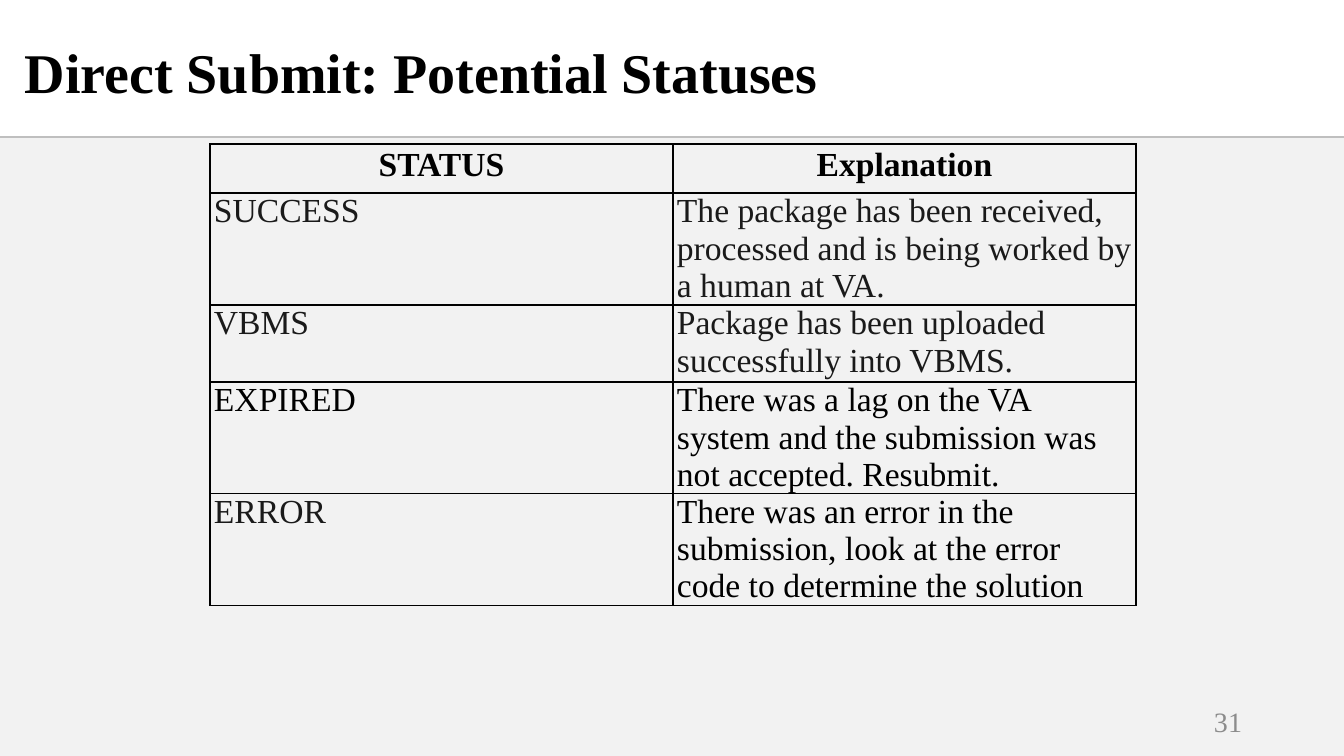
"""Build the slide listing the potential statuses of a direct submission."""
from lxml import etree
from pptx import Presentation
from pptx import util as u
from pptx.dml.color import RGBColor
from pptx.enum import shapes, text
from pptx.oxml import ns

PX = 914400 / 100.8
BLACK = "000000"
DARK = "1A1A1A"


def px(*lengths):
    return [u.Emu(round(length * PX)) for length in lengths]


def write(frame, words, size=24, color=BLACK, bold=False,
          align=text.PP_ALIGN.LEFT, anchor=text.MSO_ANCHOR.TOP, spacing=1.0):
    frame.word_wrap = True
    frame.vertical_anchor = anchor
    paragraph = frame.paragraphs[0]
    paragraph.alignment = align
    paragraph.line_spacing = spacing
    run = paragraph.add_run()
    run.text = words
    run.font.name = "Times New Roman"
    run.font.size = u.Pt(size)
    run.font.bold = bold
    run.font.color.rgb = RGBColor.from_string(color)


deck = Presentation()
deck.slide_width, deck.slide_height = px(1344, 756)
slide = deck.slides.add_slide(deck.slide_layouts[6])

body = slide.shapes.add_shape(shapes.MSO_SHAPE.RECTANGLE, *px(0, 138, 1344, 618))
body.shadow.inherit = False
body.fill.solid()
body.fill.fore_color.rgb = RGBColor.from_string("F2F2F2")
body.line.fill.background()

divider = slide.shapes.add_connector(shapes.MSO_CONNECTOR.STRAIGHT, *px(0, 137, 1344, 137))
divider.line.color.rgb = RGBColor.from_string("BFBFBF")
divider.line.width = u.Pt(1.5)
etree.SubElement(divider._element.spPr, ns.qn("a:effectLst"))

statuses = [
    ("STATUS", BLACK, "Explanation", BLACK, 49),
    ("SUCCESS", DARK,
     "The package has been received, processed and is being worked by a human at VA.", DARK, 112),
    ("VBMS", DARK, "Package has been uploaded successfully into VBMS.", DARK, 77),
    ("EXPIRED", BLACK,
     "There was a lag on the VA system and the submission was not accepted. Resubmit.", BLACK, 111),
    ("ERROR", DARK,
     "There was an error in the submission, look at the error code to determine the solution",
     BLACK, 112),
]
table = slide.shapes.add_table(len(statuses), 2, *px(210, 144, 926, 461)).table
table.first_row = table.horz_banding = False
for row, (status, status_color, meaning, meaning_color, height) in enumerate(statuses):
    table.rows[row].height = px(height)[0]
    header = row == 0
    for column, (words, color) in enumerate([(status, status_color), (meaning, meaning_color)]):
        cell = table.cell(row, column)
        cell.margin_left = cell.margin_right = px(4)[0]
        cell.margin_top = cell.margin_bottom = 0
        write(cell.text_frame, words, color=color, bold=header,
              align=text.PP_ALIGN.CENTER if header else text.PP_ALIGN.LEFT,
              spacing=1.07 if header else 1.0)
        properties = cell._tc.get_or_add_tcPr()
        for side in ("lnL", "lnR", "lnT", "lnB"):
            border = etree.SubElement(properties, ns.qn(f"a:{side}"), w=str(u.Pt(1)))
            ink = etree.SubElement(border, ns.qn("a:solidFill"))
            etree.SubElement(ink, ns.qn("a:srgbClr"), val=BLACK)
        cell.fill.background()

page_number = slide.shapes.add_textbox(*px(950, 701, 302, 40))
write(page_number.text_frame, "31", size=20, color="8C8C8C",
      align=text.PP_ALIGN.RIGHT, anchor=text.MSO_ANCHOR.MIDDLE)

title = slide.shapes.add_textbox(*px(15, 14, 987, 122))
write(title.text_frame, "Direct Submit: Potential Statuses", size=40, bold=True,
      anchor=text.MSO_ANCHOR.MIDDLE, spacing=0.9)

deck.save("out.pptx")
